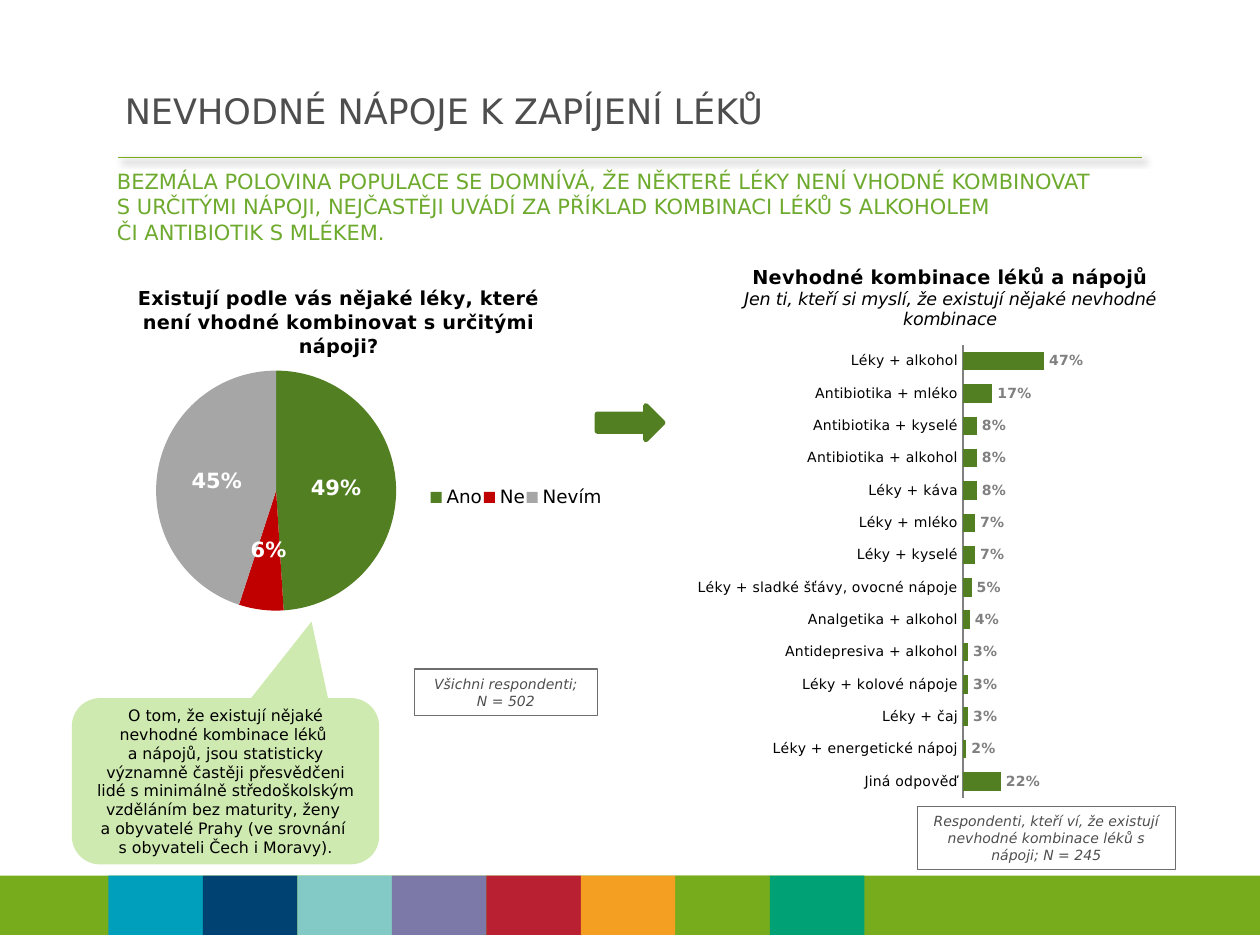
from lxml import etree
from pptx import Presentation
from pptx.chart.data import CategoryChartData
from pptx.dml.color import RGBColor
from pptx.enum.chart import XL_CHART_TYPE, XL_LABEL_POSITION, XL_LEGEND_POSITION, XL_TICK_MARK
from pptx.enum.shapes import MSO_CONNECTOR, MSO_SHAPE
from pptx.enum.text import MSO_ANCHOR, PP_ALIGN
from pptx.oxml import parse_xml
from pptx.oxml.ns import nsdecls, qn
from pptx.util import Inches, Pt

PIE, BAR = XL_CHART_TYPE.PIE, XL_CHART_TYPE.BAR_CLUSTERED
RECT, ARROW = MSO_SHAPE.RECTANGLE, MSO_SHAPE.RIGHT_ARROW
CALLOUT = MSO_SHAPE.ROUNDED_RECTANGULAR_CALLOUT
CENTER, LEFT = PP_ALIGN.CENTER, PP_ALIGN.LEFT
TOP, MIDDLE = MSO_ANCHOR.TOP, MSO_ANCHOR.MIDDLE

FONT = "DejaVu Sans"
BLACK = RGBColor(0x00, 0x00, 0x00)
WHITE = RGBColor(0xFF, 0xFF, 0xFF)
DARK = RGBColor(0x4E, 0x4E, 0x4E)
BORDER = RGBColor(0x6E, 0x6E, 0x6E)
GRAY = RGBColor(0x80, 0x80, 0x80)
GREEN = RGBColor(0x52, 0x7F, 0x22)
LIME = RGBColor(0x77, 0xAD, 0x1C)
LEAF = RGBColor(0x6E, 0xAA, 0x2E)
MINT = RGBColor(0xCE, 0xEA, 0xB0)
RED = RGBColor(0xC0, 0x00, 0x00)
SILVER = RGBColor(0xA6, 0xA6, 0xA6)
STRIPES = [
    RGBColor(0x00, 0x9F, 0xBB), RGBColor(0x00, 0x42, 0x72),
    RGBColor(0x83, 0xC9, 0xC6), RGBColor(0x7C, 0x78, 0xA8),
    RGBColor(0xB9, 0x20, 0x32), RGBColor(0xF4, 0x9F, 0x22),
    LIME, RGBColor(0x00, 0xA2, 0x75),
]

ANSWERS = [("Ano", 0.49, GREEN), ("Ne", 0.06, RED), ("Nevím", 0.45, SILVER)]
COMBINATIONS = [
    ("Léky + alkohol", 0.47), ("Antibiotika + mléko", 0.17),
    ("Antibiotika + kyselé", 0.08), ("Antibiotika + alkohol", 0.08),
    ("Léky + káva", 0.08), ("Léky + mléko", 0.07), ("Léky + kyselé", 0.07),
    ("Léky + sladké šťávy, ovocné nápoje", 0.05), ("Analgetika + alkohol", 0.04),
    ("Antidepresiva + alkohol", 0.03), ("Léky + kolové nápoje", 0.03),
    ("Léky + čaj", 0.03), ("Léky + energetické nápoj", 0.02), ("Jiná odpověď", 0.22),
]


def box(*lengths):
    return [Inches(n) for n in lengths]


def style(font, size, color, bold=False, italic=False):
    font.name, font.size, font.bold, font.italic = FONT, Pt(size), bold, italic
    font.color.rgb = color


def write(sp, text, size, color, align=LEFT, anchor=TOP, italic=False):
    tf = sp.text_frame
    tf.word_wrap = True
    tf.vertical_anchor = anchor
    p = tf.paragraphs[0]
    p.text = text
    p.alignment = align
    style(p.font, size, color, italic=italic)
    return p


def add_shape(slide, kind, at, fill=None, line=None, width=0.75):
    sp = slide.shapes.add_shape(kind, *box(*at))
    sp.shadow.inherit = False
    if fill is None:
        sp.fill.background()
    else:
        sp.fill.solid()
        sp.fill.fore_color.rgb = fill
    if line is None:
        sp.line.fill.background()
    else:
        sp.line.color.rgb = line
        sp.line.width = Pt(width)
    return sp


def add_note(slide, text, at):
    sp = add_shape(slide, RECT, at, line=BORDER)
    write(sp, text, 8, DARK, CENTER, MIDDLE, italic=True)


def add_rule(slide):
    line = slide.shapes.add_connector(MSO_CONNECTOR.STRAIGHT, *box(0.94, 1.25, 9.06, 1.25))
    line.line.color.rgb = LIME
    line.line.width = Pt(0.75)
    line._element.spPr.append(parse_xml(
        f'<a:effectLst {nsdecls("a")}><a:outerShdw blurRad="50800" dist="38100" dir="2700000">'
        '<a:srgbClr val="000000"><a:alpha val="40000"/></a:srgbClr>'
        '</a:outerShdw></a:effectLst>'))


def add_band(slide):
    top, height, start, step = 6.95, 0.47, 0.86, 0.75
    add_shape(slide, RECT, (0, top, 10, height), LIME)
    for i, color in enumerate(STRIPES):
        add_shape(slide, RECT, (start + i * step, top, step, height), color)


def place(element, index, inner=False, **shares):
    for old in element.findall(qn("c:layout")):
        element.remove(old)
    layout = etree.Element(qn("c:layout"))
    manual = etree.SubElement(layout, qn("c:manualLayout"))
    if inner:
        etree.SubElement(manual, qn("c:layoutTarget")).set("val", "inner")
    for key in "xy":
        etree.SubElement(manual, qn(f"c:{key}Mode")).set("val", "edge")
    for key, share in shares.items():
        etree.SubElement(manual, qn(f"c:{key}")).set("val", str(share))
    element.insert(index, layout)


def add_chart(slide, kind, at, names, values, plot):
    data = CategoryChartData(number_format="0%")
    data.categories = names
    data.add_series("Series 1", values)
    chart = slide.shapes.add_chart(kind, *box(*at), data).chart
    chart.font.name, chart.font.size = FONT, Pt(18)
    chart.font.color.rgb = BLACK
    chart.has_legend = False
    place(chart._chartSpace.chart.plotArea, 0, True, **dict(zip("xywh", plot)))
    return chart


def add_title(chart, x, y, heading, subtitle=None):
    tf = chart.chart_title.text_frame
    tf.text = heading
    style(tf.paragraphs[0].font, 11, BLACK, bold=True)
    if subtitle:
        p = tf.add_paragraph()
        p.text = subtitle
        style(p.font, 10, BLACK, italic=True)
    place(chart.chart_title._element, 1, x=x, y=y)


def add_labels(plot, size, color, position):
    plot.has_data_labels = True
    labels = plot.data_labels
    labels.show_value = True
    labels.number_format, labels.number_format_is_linked = "0%", False
    labels.position = position
    style(labels.font, size, color, bold=True)


def add_answers(slide):
    names, values, colors = zip(*ANSWERS)
    chart = add_chart(slide, PIE, (0.46, 2.13, 4.33, 3.53), names, values, (0.18, 0.23, 0.44, 0.54))
    add_title(chart, 0.14, 0.03,
              "Existují podle vás nějaké léky, které není vhodné kombinovat s určitými nápoji?")
    plot = chart.plots[0]
    plot.vary_by_categories = True
    for i, color in enumerate(colors):
        fill = plot.series[0].points[i].format.fill
        fill.solid()
        fill.fore_color.rgb = color
    add_labels(plot, 12, WHITE, XL_LABEL_POSITION.CENTER)
    chart.has_legend = True
    legend = chart.legend
    legend.position = XL_LEGEND_POSITION.LEFT
    legend.include_in_layout = False
    style(legend.font, 10.5, BLACK)
    place(legend._element, 1, x=0.68, y=0.33, w=0.32, h=0.37)


def add_combinations(slide):
    names, values = zip(*COMBINATIONS)
    chart = add_chart(slide, BAR, (5.08, 2.02, 4.42, 4.49), names, values, (0.58, 0.16, 0.31, 0.8))
    add_title(chart, 0.18, 0.01, "Nevhodné kombinace léků a nápojů",
              "Jen ti, kteří si myslí, že existují nějaké nevhodné kombinace")
    plot = chart.plots[0]
    plot.vary_by_categories = False
    plot.gap_width = 75
    fill = plot.series[0].format.fill
    fill.solid()
    fill.fore_color.rgb = GREEN
    add_labels(plot, 8, GRAY, XL_LABEL_POSITION.OUTSIDE_END)
    axis = chart.category_axis
    axis.reverse_order = True
    axis.major_tick_mark = XL_TICK_MARK.NONE
    axis.format.line.color.rgb = GRAY
    style(axis.tick_labels.font, 8, BLACK)
    scale = chart.value_axis
    scale.minimum_scale, scale.maximum_scale = 0, 1
    scale.has_major_gridlines = False
    scale.visible = False


def main():
    prs = Presentation()
    prs.slide_width, prs.slide_height = box(10, 7.5)
    slide = prs.slides.add_slide(prs.slide_layouts[5])
    add_rule(slide)
    add_band(slide)
    title = slide.shapes.title
    title.left, title.top, title.width, title.height = box(0.89, 0.62, 8.87, 0.51)
    p = write(title, "NEVHODNÉ NÁPOJE K ZAPÍJENÍ LÉKŮ", 20, DARK, anchor=MIDDLE)
    p.space_after = Pt(3)
    write(slide.shapes.add_textbox(*box(0.83, 1.29, 8.82, 0.55)),
          "BEZMÁLA POLOVINA POPULACE SE DOMNÍVÁ, ŽE NĚKTERÉ LÉKY NENÍ VHODNÉ KOMBINOVAT \v"
          "S URČITÝMI NÁPOJI, NEJČASTĚJI UVÁDÍ ZA PŘÍKLAD KOMBINACI LÉKŮ S ALKOHOLEM \v"
          "ČI ANTIBIOTIK S MLÉKEM.", 12, LEAF)
    add_answers(slide)
    callout = add_shape(slide, CALLOUT, (0.57, 5.54, 2.44, 1.32), MINT)
    for i, share in enumerate((0.28, -0.96, 0.17)):
        callout.adjustments[i] = share
    write(callout,
          "O tom, že existují nějaké nevhodné kombinace léků \v"
          "a nápojů, jsou statisticky významně častěji přesvědčeni lidé s minimálně "
          "středoškolským vzděláním bez maturity, ženy \v"
          "a obyvatelé Prahy (ve srovnání \vs obyvateli Čech i Moravy).",
          9, BLACK, CENTER, MIDDLE)
    add_combinations(slide)
    add_note(slide, "Všichni respondenti; N = 502", (3.29, 5.31, 1.45, 0.37))
    add_note(slide, "Respondenti, kteří ví, že existují nevhodné kombinace léků s nápoji; N = 245",
             (7.28, 6.4, 2.05, 0.5))
    add_shape(slide, ARROW, (4.74, 3.22, 0.52, 0.27), GREEN, GREEN, 3)
    prs.save("out.pptx")


if __name__ == "__main__":
    main()
